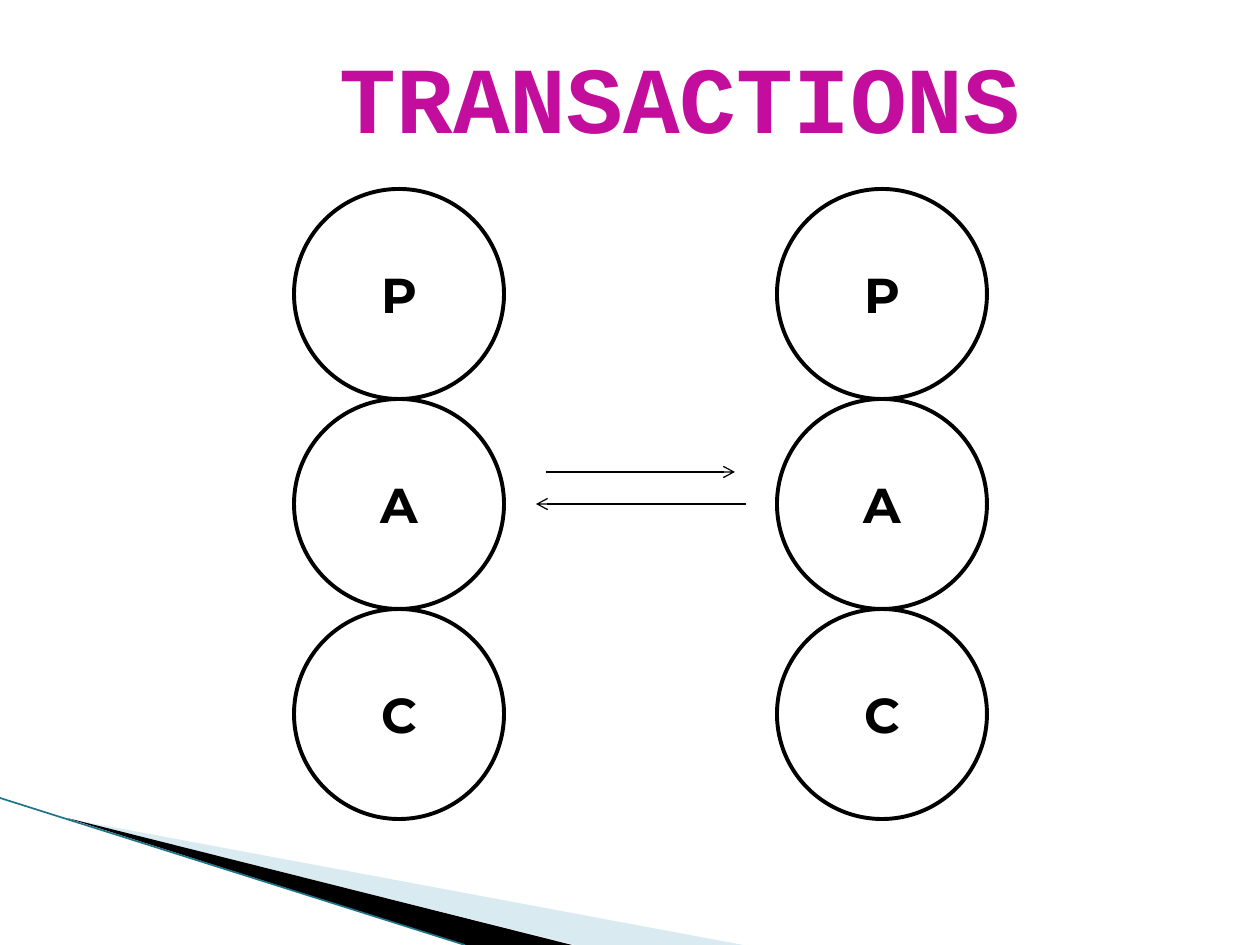
from lxml import etree
from pptx import Presentation
from pptx.dml.color import RGBColor
from pptx.enum.shapes import MSO_CONNECTOR, MSO_SHAPE
from pptx.enum.text import MSO_ANCHOR, PP_ALIGN
from pptx.oxml.ns import qn
from pptx.util import Pt

STRAIGHT = MSO_CONNECTOR.STRAIGHT
OVAL = MSO_SHAPE.OVAL
MIDDLE = MSO_ANCHOR.MIDDLE
CENTER = PP_ALIGN.CENTER

EMU_PER_PX = 914400 / 126
COLORS = {
    "ink": "000000",
    "title": "C30D9C",
    "pale_wedge": "A0CBDC",
    "edge": "1F7388",
}


def px(length):
    return round(length * EMU_PER_PX)


def add_line(start, end, color, width):
    line = slide.shapes.add_connector(STRAIGHT, *map(px, start + end))
    line.line.color.rgb = RGBColor.from_string(COLORS[color])
    line.line.width = Pt(width)
    etree.SubElement(line._element.spPr, qn("a:effectLst"))
    return line


prs = Presentation()
prs.slide_width = px(1260)
prs.slide_height = px(945)
slide = prs.slides.add_slide(prs.slide_layouts[5])

wedges = [
    ("pale_wedge", 40, [(69, 819), (743, 945), (575, 945)]),
    ("ink", 100, [(67, 818), (572, 945), (465, 945)]),
]
for color, opacity, corners in wedges:
    builder = slide.shapes.build_freeform(*corners[0], scale=EMU_PER_PX)
    builder.add_line_segments(corners[1:], close=True)
    wedge = builder.convert_to_shape()
    wedge.shadow.inherit = False
    wedge.fill.solid()
    wedge.fill.fore_color.rgb = RGBColor.from_string(COLORS[color])
    wedge.line.fill.background()
    if opacity < 100:
        fill_color = wedge._element.spPr.find(qn("a:solidFill"))[0]
        etree.SubElement(fill_color, qn("a:alpha"), val=str(opacity * 1000))

add_line((0, 798), (465, 945), "edge", 0.95)

DIAMETER = 210
for left in (294, 777):
    for row, ego_state in enumerate("PAC"):
        circle = slide.shapes.add_shape(
            OVAL, px(left), px(189 + row * DIAMETER), px(DIAMETER), px(DIAMETER)
        )
        circle.shadow.inherit = False
        circle.fill.background()
        circle.line.color.rgb = RGBColor.from_string(COLORS["ink"])
        circle.line.width = Pt(2.25)
        circle.text_frame.word_wrap = False
        circle.text_frame.vertical_anchor = MIDDLE
        label = circle.text_frame.paragraphs[0]
        label.alignment = CENTER
        letter = label.add_run()
        letter.text = ego_state
        letter.font.name = "Montserrat"
        letter.font.size = Pt(28)
        letter.font.bold = True
        letter.font.color.rgb = RGBColor.from_string(COLORS["ink"])

for start, end in [((546, 472), (735, 472)), ((746, 504), (536, 504))]:
    transaction = add_line(start, end, "ink", 0.75)
    etree.SubElement(transaction.line._get_or_add_ln(), qn("a:tailEnd"), type="arrow")

title = slide.shapes.title
title.left, title.top, title.width, title.height = map(px, (305, 32, 750, 127))
title.text_frame.word_wrap = False
title.text_frame.vertical_anchor = MIDDLE
heading = title.text_frame.paragraphs[0]
heading.alignment = CENTER
heading_text = heading.add_run()
heading_text.text = "TRANSACTIONS"
heading_text.font.name = "Courier New"
heading_text.font.size = Pt(54)
heading_text.font.bold = True
heading_text.font.color.rgb = RGBColor.from_string(COLORS["title"])

prs.save("out.pptx")
